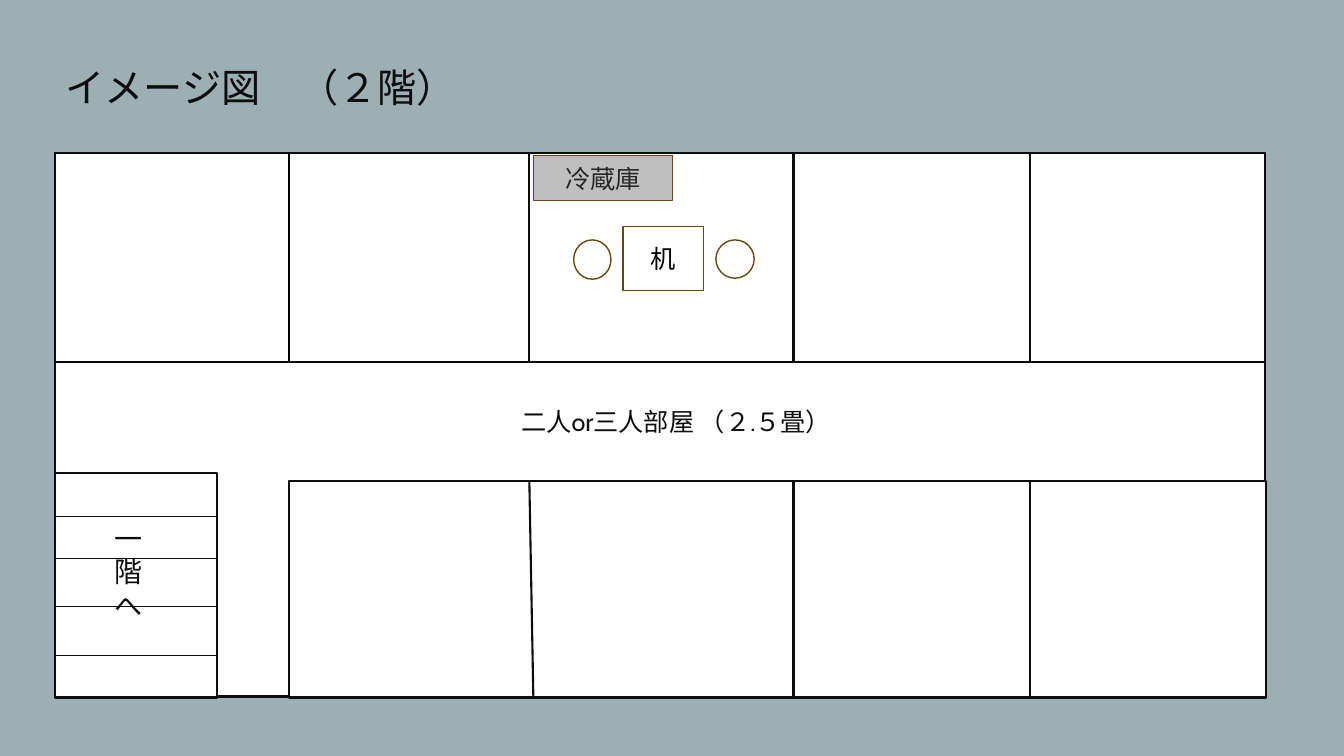
from dataclasses import dataclass

from lxml.etree import SubElement
from pptx import Presentation
from pptx.dml.color import RGBColor
from pptx.enum.shapes import MSO_CONNECTOR as Link, MSO_SHAPE as Kind
from pptx.enum.text import MSO_ANCHOR as Anchor, PP_ALIGN as Align
from pptx.oxml.ns import qn
from pptx.slide import Slide
from pptx.text.text import TextFrame
from pptx.util import Inches, Pt

FONT = "Cabin"
INK, WHITE, BROWN = "0D0D0D", "FFFFFF", "6C470D"


@dataclass
class Box:
    left: float
    top: float
    width: float
    height: float
    edge: str = INK
    weight: float = 1.5
    fill: str = WHITE
    kind: Kind = Kind.RECTANGLE
    text: str = ""
    color: str = "000000"


@dataclass
class Wall:
    x1: float
    y1: float
    x2: float
    y2: float
    color: str = INK
    weight: float = 1.5


@dataclass
class Label:
    left: float
    top: float
    width: float
    height: float
    text: str
    size: int


def rgb(code: str) -> RGBColor:
    return RGBColor.from_string(code)


def write(frame: TextFrame, text: str, size: int, color: str) -> None:
    frame.word_wrap = True
    frame.text = text
    font = frame.paragraphs[0].runs[0].font
    font.name, font.size = FONT, Pt(size)
    font.color.rgb = rgb(color)


def add_box(slide: Slide, box: Box) -> None:
    shape = slide.shapes.add_shape(
        box.kind, Inches(box.left), Inches(box.top),
        Inches(box.width), Inches(box.height))
    shape.shadow.inherit = False
    shape.fill.solid()
    shape.fill.fore_color.rgb = rgb(box.fill)
    shape.line.color.rgb = rgb(box.edge)
    shape.line.width = Pt(box.weight)
    if box.text:
        frame = shape.text_frame
        write(frame, box.text, 18, box.color)
        frame.vertical_anchor = Anchor.MIDDLE
        frame.paragraphs[0].alignment = Align.CENTER


def add_wall(slide: Slide, wall: Wall) -> None:
    line = slide.shapes.add_connector(
        Link.STRAIGHT, Inches(wall.x1), Inches(wall.y1),
        Inches(wall.x2), Inches(wall.y2))
    line.line.color.rgb = rgb(wall.color)
    line.line.width = Pt(wall.weight)
    SubElement(line._element.spPr, qn("a:effectLst"))


def add_label(slide: Slide, label: Label) -> None:
    area = slide.shapes.add_textbox(
        Inches(label.left), Inches(label.top),
        Inches(label.width), Inches(label.height))
    write(area.text_frame, label.text, label.size, INK)


LEFT, TOP, BASE = 0.55, 1.52, 6.92
HALL_TOP, HALL_END = 3.59, 4.77

ROOMS = [
    Box(LEFT, TOP, 12, 5.39),
    Box(LEFT, TOP, 12, HALL_TOP - TOP),
    Box(LEFT, 4.69, 1.6, 2.23),
    Box(2.87, HALL_END, 9.69, BASE - HALL_END),
]
STEPS = [Wall(LEFT, y, 2.14, y, weight=0.5) for y in (5.12, 5.54, 6.02, 6.5)]
UPPER = [Wall(x, TOP, x, HALL_TOP, color)
         for x, color in ((2.87, "000000"), (5.25, INK), (7.87, INK), (10.22, INK))]
LOWER = [Wall(x, HALL_END, foot, BASE)
         for x, foot in ((5.25, 5.29), (7.87, 7.87), (10.22, 10.22))]
LABELS = [
    Label(LEFT, 0.58, 6.12, 0.57, "イメージ図　（２階）", 28),
    Label(1.04, 5.12, 0.68, 1.11, "一階へ", 20),
    Label(5.07, 3.98, 4.68, 0.4, "二人or三人部屋 （２.５畳）　", 18),
]
GOODS = [
    Box(6.18, 2.25, 0.8, 0.63, BROWN, 1, text="机"),
    Box(5.69, 2.38, 0.37, 0.39, BROWN, 1, kind=Kind.FLOWCHART_CONNECTOR),
    Box(7.1, 2.38, 0.38, 0.38, BROWN, 1, kind=Kind.FLOWCHART_CONNECTOR),
    Box(5.29, 1.54, 1.38, 0.45, BROWN, 1, "BFBFBF", text="冷蔵庫", color="262626"),
]


def main() -> None:
    deck = Presentation()
    deck.slide_width, deck.slide_height = Inches(13.33), Inches(7.5)
    slide = deck.slides.add_slide(deck.slide_layouts[6])
    back = slide.background.fill
    back.solid()
    back.fore_color.rgb = rgb("9BAFB5")
    for room in ROOMS:
        add_box(slide, room)
    for wall in STEPS + UPPER + LOWER:
        add_wall(slide, wall)
    for label in LABELS:
        add_label(slide, label)
    for item in GOODS:
        add_box(slide, item)
    deck.save("out.pptx")


if __name__ == "__main__":
    main()
